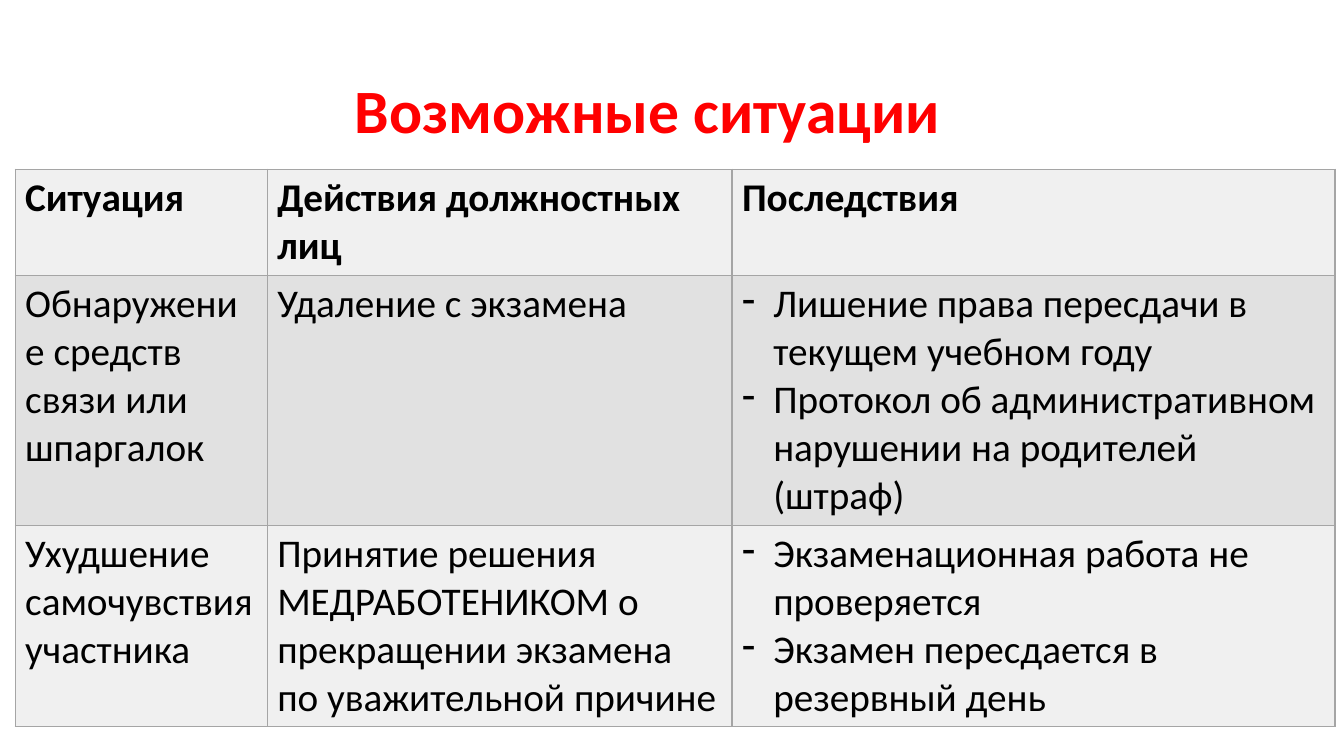
import pptx
import pptx.dml.color
import pptx.enum.text
import pptx.oxml
import pptx.oxml.ns
import pptx.util
import lxml.etree

SLIDE_WIDTH, SLIDE_HEIGHT = 13.33, 7.5
COLORS = {
    "title": "FF0000",
    "text": "000000",
    "light_row": "F0F0F0",
    "dark_row": "E1E1E1",
    "border": "A5A5A5",
}
TITLE_FONT = {"name": "Calibri", "size": pptx.util.Pt(44), "bold": True}
HEADER_FONT = {"name": "Calibri", "size": pptx.util.Pt(28), "bold": True}
BODY_FONT = {**HEADER_FONT, "bold": False}

TITLE_BOX = (3.42, 0.4, 9, 1.45)
TABLE_BOX = (0.15, 1.68, 13.09, 5.53)
COLUMN_WEIGHTS = (2.5, 4.61, 5.98)
ROW_WEIGHTS = (1.05, 2.48, 2)
DASH_INDENT = 0.31

# A string is plain cell text, a list is a set of dashed points.
SITUATIONS = [
    ("Ситуация", "Действия должностных лиц", "Последствия"),
    (
        "Обнаружение средств связи или шпаргалок",
        "Удаление с экзамена",
        [
            "Лишение права пересдачи в текущем учебном году",
            "Протокол об административном нарушении на родителей (штраф)",
        ],
    ),
    (
        "Ухудшение самочувствия участника",
        "Принятие решения МЕДРАБОТЕНИКОМ о прекращении экзамена по уважительной причине",
        [
            "Экзаменационная работа не проверяется",
            "Экзамен пересдается в резервный день",
        ],
    ),
]


def rgb(name):
    return pptx.dml.color.RGBColor.from_string(COLORS[name])


def write_text(paragraph, text, font_format, color):
    run = paragraph.add_run()
    run.text = text
    for attribute, value in font_format.items():
        setattr(run.font, attribute, value)
    run.font.color.rgb = rgb(color)


def add_dash(paragraph):
    properties = paragraph._p.get_or_add_pPr()
    indent = pptx.util.Inches(DASH_INDENT)
    properties.set("marL", str(indent))
    properties.set("indent", str(-indent))
    dash = lxml.etree.SubElement(properties, pptx.oxml.ns.qn("a:buChar"))
    dash.set("char", "-")


def add_borders(cell):
    """Draw all four edges; they must precede the fill in the cell properties."""
    properties = cell._tc.get_or_add_tcPr()
    for position, edge in enumerate(("lnL", "lnR", "lnT", "lnB")):
        line = pptx.oxml.parse_xml(
            f'<a:{edge} {pptx.oxml.ns.nsdecls("a")} w="{pptx.util.Pt(1)}">'
            f'<a:solidFill><a:srgbClr val="{COLORS["border"]}"/></a:solidFill>'
            f"</a:{edge}>"
        )
        properties.insert(position, line)


def fill_cell(cell, content, font_format, background):
    cell.fill.solid()
    cell.fill.fore_color.rgb = rgb(background)
    add_borders(cell)
    dashed = isinstance(content, list)
    for index, text in enumerate(content if dashed else [content]):
        frame = cell.text_frame
        paragraph = frame.add_paragraph() if index else frame.paragraphs[0]
        if dashed:
            add_dash(paragraph)
        write_text(paragraph, text, font_format, "text")


def add_title(slide, box):
    frame = slide.shapes.add_textbox(*map(pptx.util.Inches, box)).text_frame
    frame.word_wrap = True
    frame.vertical_anchor = pptx.enum.text.MSO_ANCHOR.MIDDLE
    heading = frame.paragraphs[0]
    heading.line_spacing = 0.9
    write_text(heading, "Возможные ситуации", TITLE_FONT, "title")


def add_situations(slide, box):
    _, _, width, height = box
    table = slide.shapes.add_table(
        len(ROW_WEIGHTS), len(COLUMN_WEIGHTS), *map(pptx.util.Inches, box)
    ).table
    table.first_row = table.horz_banding = False
    for column, weight in zip(table.columns, COLUMN_WEIGHTS):
        column.width = pptx.util.Inches(width * weight / sum(COLUMN_WEIGHTS))
    for row, weight in zip(table.rows, ROW_WEIGHTS):
        row.height = pptx.util.Inches(height * weight / sum(ROW_WEIGHTS))

    for row_index, (row, contents) in enumerate(zip(table.rows, SITUATIONS)):
        font_format = BODY_FONT if row_index else HEADER_FONT
        background = "dark_row" if row_index % 2 else "light_row"
        for cell, content in zip(row.cells, contents):
            fill_cell(cell, content, font_format, background)


def main():
    presentation = pptx.Presentation()
    presentation.slide_width = pptx.util.Inches(SLIDE_WIDTH)
    presentation.slide_height = pptx.util.Inches(SLIDE_HEIGHT)
    slide = presentation.slides.add_slide(presentation.slide_layouts[6])
    add_title(slide, TITLE_BOX)
    add_situations(slide, TABLE_BOX)
    presentation.save("out.pptx")


if __name__ == "__main__":
    main()
